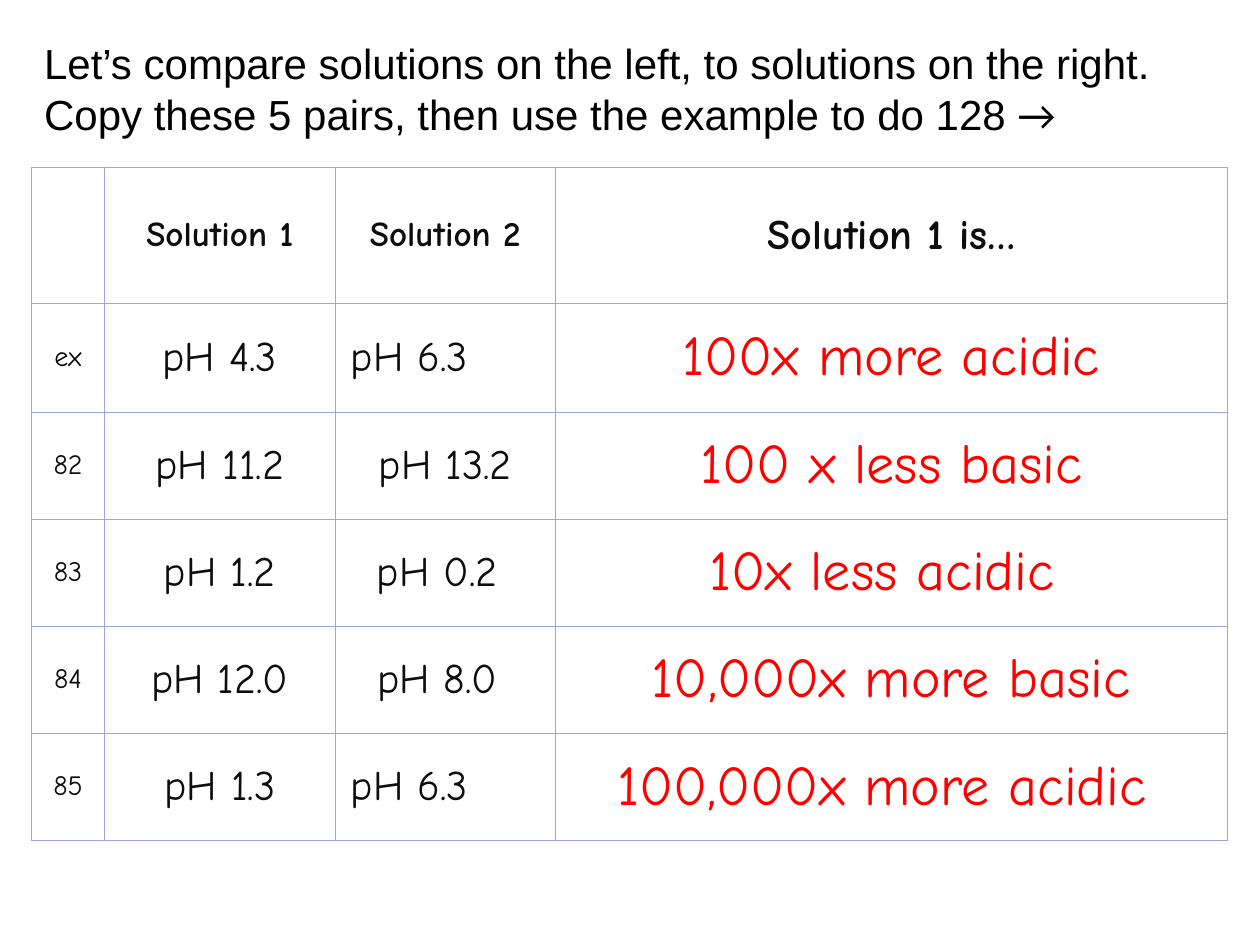
from pptx import Presentation
from pptx.dml.color import RGBColor
from pptx.enum import text
from pptx.oxml import parse_xml
from pptx.oxml.ns import nsdecls
from pptx.util import Inches, Pt

COLORS = {"black": "000000", "ink": "0D0D0D", "answer": "FF0000", "grid": "A3A3E0"}
COL_WIDTHS = [0.58, 1.83, 1.75, 5.33]
ROW_HEIGHTS = [1.08, 0.86, 0.85, 0.85, 0.85, 0.85]
HEADER_SIZES = [16, 20, 20, 24]
BODY_SIZES = [16, 24, 24, 32]
ROWS = [
    ["", "Solution 1", "Solution 2", "Solution 1 is…"],
    ["ex", "pH 4.3", "pH 6.3", "100x more acidic"],
    ["82", "pH 11.2", "pH 13.2", "100 x less basic"],
    ["83", "pH 1.2", "pH 0.2", "10x less acidic"],
    ["84", "pH 12.0", "pH 8.0", "10,000x more basic"],
    ["85", "pH 1.3", "pH 6.3", "100,000x more acidic"],
]
# Extra right margin, by (row, column), for entries set left of centre
RIGHT_INDENTS = {(1, 2): 0.57, (5, 2): 0.57, (3, 2): 0.13, (4, 2): 0.13,
                 (3, 3): 0.15, (5, 3): 0.15}


def style_run(r, font, size, color, bold=False):
    r.font.name = font
    r.font.size = Pt(size)
    r.font.bold = bold
    r.font.color.rgb = RGBColor.from_string(COLORS[color])


def add_instructions(s, left, top, width, height):
    title = s.shapes.title
    title.left, title.top, title.width, title.height = map(
        Inches, (left, top, width, height))
    tf = title.text_frame
    tf.word_wrap = True
    tf.auto_size = text.MSO_AUTO_SIZE.NONE
    tf.vertical_anchor = text.MSO_ANCHOR.TOP
    p = tf.paragraphs[0]
    p.text = ("Let’s compare solutions on the left, to solutions on the right.\v"
              "Copy these 5 pairs, then use the example to do 128 ")
    p.alignment = text.PP_ALIGN.LEFT
    p.line_spacing = 1.0
    p.add_run().text = "→"
    for r in p.runs:
        style_run(r, "Calibri" if r.text == "→" else "Arial", 24, "black")


def set_borders(cell):
    tc_pr = cell._tc.get_or_add_tcPr()
    for i, side in enumerate(("lnL", "lnR", "lnT", "lnB")):
        tc_pr.insert(i, parse_xml(
            f'<a:{side} {nsdecls("a")} w="{Pt(0.25)}"><a:solidFill>'
            f'<a:srgbClr val="{COLORS["grid"]}"/></a:solidFill></a:{side}>'))


def add_comparison_table(s, left, top):
    frame = s.shapes.add_table(
        len(ROWS), len(COL_WIDTHS), Inches(left), Inches(top),
        Inches(sum(COL_WIDTHS)), Inches(sum(ROW_HEIGHTS)))
    table = frame.table
    table.first_row = table.horz_banding = False
    for column, width in zip(table.columns, COL_WIDTHS):
        column.width = Inches(width)
    for row, height in zip(table.rows, ROW_HEIGHTS):
        row.height = Inches(height)
    for i, values in enumerate(ROWS):
        sizes = BODY_SIZES if i else HEADER_SIZES
        for j, value in enumerate(values):
            cell = table.cell(i, j)
            cell.fill.background()
            set_borders(cell)
            cell.vertical_anchor = text.MSO_ANCHOR.MIDDLE
            cell.margin_right = Inches(0.1 + RIGHT_INDENTS.get((i, j), 0))
            p = cell.text_frame.paragraphs[0]
            p.text = value
            p.alignment = text.PP_ALIGN.CENTER
            if value == "ex":
                color = "black"
            else:
                color = "answer" if i and j == 3 else "ink"
            for r in p.runs:
                style_run(r, "Comic Neue", sizes[j], color, bold=i == 0)


def main():
    prs = Presentation()
    prs.slide_width, prs.slide_height = Inches(10), Inches(7.5)
    s = prs.slides.add_slide(prs.slide_layouts[5])
    add_instructions(s, 0.25, 0.25, 9.5, 0.91)
    add_comparison_table(s, 0.25, 1.33)
    prs.save("out.pptx")


if __name__ == "__main__":
    main()
